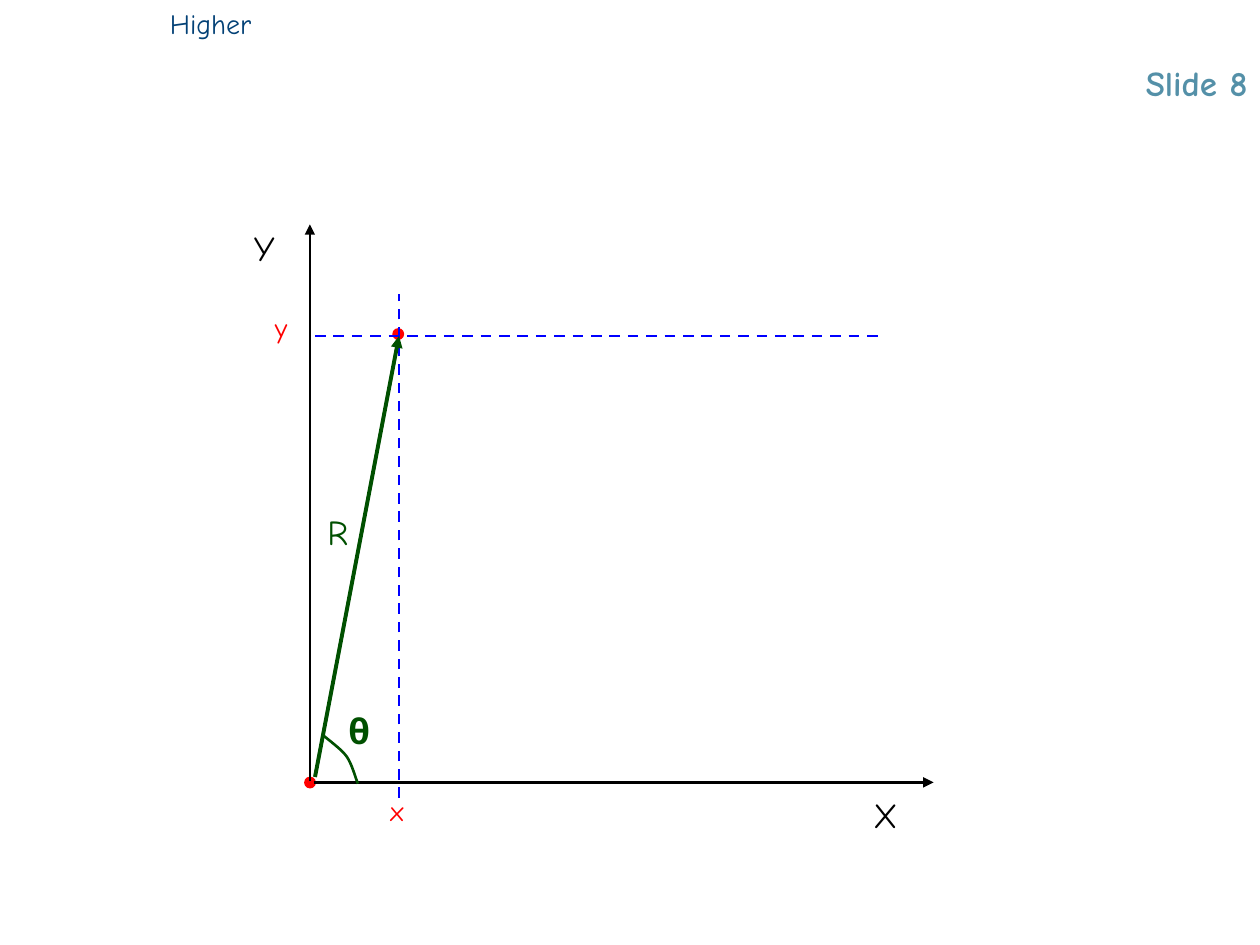
from typing import NamedTuple, Optional

from lxml.etree import SubElement
from pptx import Presentation
from pptx.dml.color import RGBColor
from pptx.enum.dml import MSO_LINE
from pptx.enum.shapes import MSO_CONNECTOR, MSO_SHAPE
from pptx.enum.text import MSO_ANCHOR, PP_ALIGN
from pptx.oxml.ns import qn
from pptx.slide import Slide
from pptx.util import Pt

FONT = "Comic Neue"
COLORS = {
    "axis": "000000",
    "point": "FF0000",
    "guide": "0000FF",
    "vector": "005000",
    "level": "034176",
    "number": "5490A8",
}
DOT_SIZE = 6
CURVE_STEPS = 12


class Label(NamedTuple):
    text: str
    left: float
    top: float
    color: str
    size: float = 20
    bold: bool = False


class Segment(NamedTuple):
    start: tuple[float, float]
    end: tuple[float, float]
    color: str
    width: float = 1.5
    arrow: bool = False
    dashed: bool = False


DOTS = [(174.2, 444.2), (224.6, 187.9)]
AXES = [
    Segment((179.3, 447.1), (533.5, 447.1), "axis", arrow=True),
    Segment((177.1, 446.4), (177.1, 128.2), "axis", arrow=True),
]
GUIDES = [
    Segment((228, 456), (228, 168), "guide", dashed=True),
    Segment((180, 192), (504, 192), "guide", dashed=True),
]
RADIUS = Segment((180, 444), (228, 192), "vector", width=2.25, arrow=True)
LABELS = [
    Label("X", 492, 450, "axis"),
    Label("Y", 138, 126, "axis"),
    Label("x", 216, 450, "point", size=16),
    Label("y", 150, 174, "point", size=16),
    Label("R", 180, 288, "vector"),
    Label("θ", 192, 402, "vector", bold=True),
]
ANGLE_CURVES = [
    [(184.3, 419.8), (186.5, 422), (193.7, 427), (197.3, 431.3)],
    [(197.3, 431.3), (200.9, 435.6), (203, 444.2), (204.5, 447.8)],
]


def rgb(name: str) -> RGBColor:
    """Return the named colour."""
    return RGBColor.from_string(COLORS[name])


def add_text(slide: Slide, text: str, left: float, top: float, width: float,
             height: float, *, color: str, size: float = 20, bold: bool = False,
             align: Optional[PP_ALIGN] = None, anchor: MSO_ANCHOR = MSO_ANCHOR.TOP,
             bottom_margin: float = 3.6) -> None:
    """Add one line of formatted text."""
    frame = slide.shapes.add_textbox(Pt(left), Pt(top), Pt(width), Pt(height)).text_frame
    frame.word_wrap = True
    frame.vertical_anchor = anchor
    frame.margin_bottom = Pt(bottom_margin)
    paragraph = frame.paragraphs[0]
    paragraph.text = text
    paragraph.alignment = align
    paragraph.font.name = FONT
    paragraph.font.size = Pt(size)
    paragraph.font.bold = bold
    paragraph.font.color.rgb = rgb(color)


def add_segment(slide: Slide, segment: Segment) -> None:
    """Draw a straight line, dashed or with an arrowhead at its end."""
    connector = slide.shapes.add_connector(
        MSO_CONNECTOR.STRAIGHT, *(Pt(value) for value in segment.start + segment.end))
    connector.line.color.rgb = rgb(segment.color)
    connector.line.width = Pt(segment.width)
    if segment.dashed:
        connector.line.dash_style = MSO_LINE.DASH
    properties = connector._element.spPr
    if segment.arrow:
        SubElement(properties.find(qn("a:ln")), qn("a:tailEnd"), type="triangle")
    SubElement(properties, qn("a:effectLst"))


def add_dot(slide: Slide, left: float, top: float) -> None:
    """Draw one marked point."""
    dot = slide.shapes.add_shape(
        MSO_SHAPE.OVAL, Pt(left), Pt(top), Pt(DOT_SIZE), Pt(DOT_SIZE))
    dot.shadow.inherit = False
    dot.fill.solid()
    dot.fill.fore_color.rgb = rgb("point")
    dot.line.color.rgb = rgb("point")
    dot.line.width = Pt(0.75)


def bezier_point(curve: list[tuple[float, float]], t: float) -> tuple[int, int]:
    """Return the position at t on a cubic curve."""
    weights = ((1 - t) ** 3, 3 * t * (1 - t) ** 2, 3 * t ** 2 * (1 - t), t ** 3)
    x, y = (sum(w * v for w, v in zip(weights, values)) for values in zip(*curve))
    return Pt(x), Pt(y)


def add_angle(slide: Slide) -> None:
    """Draw the open arc that marks the angle."""
    points = [bezier_point(curve, step / CURVE_STEPS)
              for curve in ANGLE_CURVES for step in range(1, CURVE_STEPS + 1)]
    builder = slide.shapes.build_freeform(*bezier_point(ANGLE_CURVES[0], 0))
    builder.add_line_segments(points, close=False)
    angle = builder.convert_to_shape()
    angle.shadow.inherit = False
    angle.fill.background()
    angle.line.color.rgb = rgb("vector")
    angle.line.width = Pt(1.5)


def main() -> None:
    """Build and save the polar coordinates slide."""
    presentation = Presentation()
    presentation.slide_width, presentation.slide_height = Pt(720), Pt(540)
    slide = presentation.slides.add_slide(presentation.slide_layouts[6])
    add_text(slide, "Slide 8", 120, 12, 600, 55.4, color="number", bold=True,
             align=PP_ALIGN.RIGHT, anchor=MSO_ANCHOR.BOTTOM, bottom_margin=8.3)
    add_text(slide, "Higher", 90, 0, 258, 26.6, color="level", size=16)
    for left, top in DOTS:
        add_dot(slide, left, top)
    for segment in AXES + GUIDES + [RADIUS]:
        add_segment(slide, segment)
    add_angle(slide)
    for label in LABELS:
        add_text(slide, label.text, label.left, label.top, 54, label.size * 1.15 + 8,
                 color=label.color, size=label.size, bold=label.bold)
    presentation.save("out.pptx")


if __name__ == "__main__":
    main()
